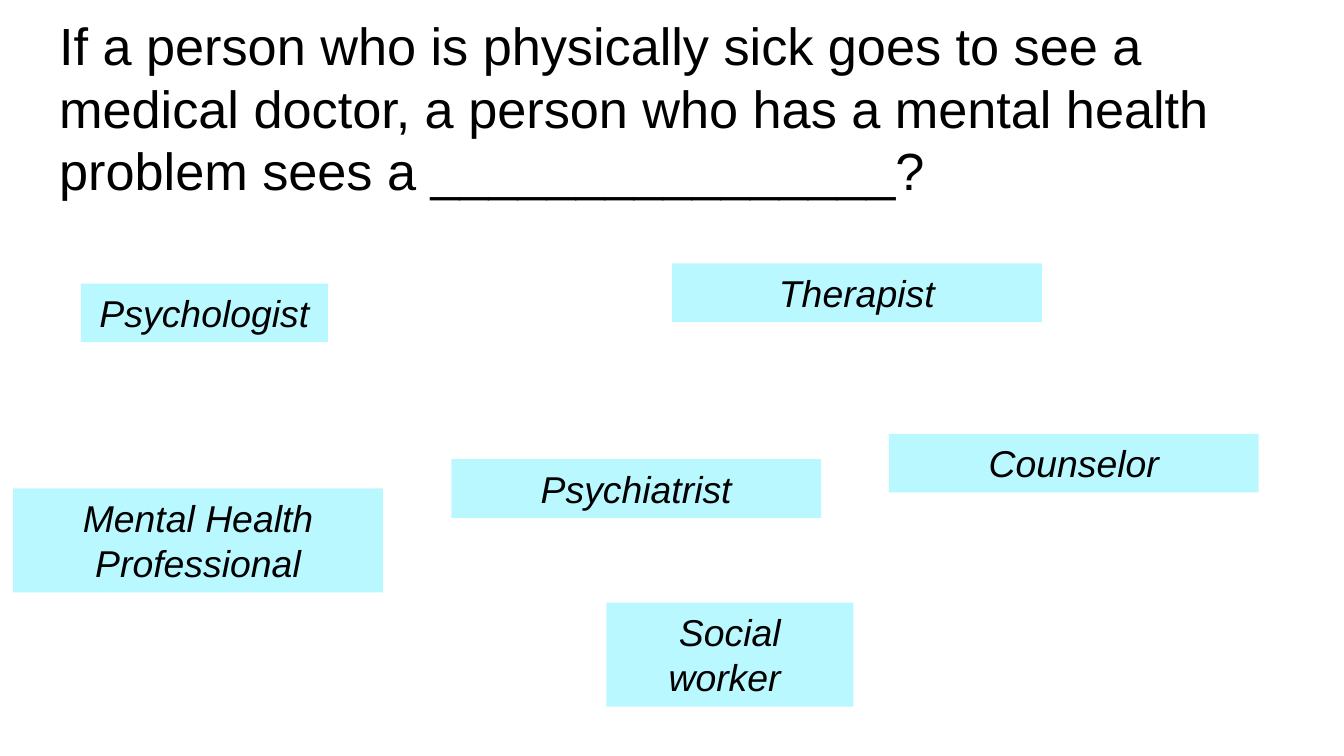
from pptx import Presentation
from pptx import util as u
from pptx.dml.color import RGBColor
from pptx.enum import shapes, text

BLACK = RGBColor(0x00, 0x00, 0x00)
PALE_CYAN = RGBColor(0xBA, 0xF8, 0xFF)
FONT = "Arial"

# Content
QUESTION = (
    "If a person who is physically sick goes to see a medical doctor, "
    "a person who has a mental health problem sees a ________________?"
)
NARROW, WIDE = 4.67, 6.99  # answer widths in cm
ONE_LINE, TWO_LINES = 1.11, 1.97  # answer heights in cm
ANSWERS = [  # wording, left, top, width, height
    ("Psychologist", 1.53, 5.36, NARROW, ONE_LINE),
    ("Social worker ", 11.46, 11.39, NARROW, TWO_LINES),
    ("Mental Health Professional", 0.25, 9.23, WIDE, TWO_LINES),
    ("Psychiatrist", 8.53, 8.68, WIDE, ONE_LINE),
    ("Therapist", 12.7, 4.98, WIDE, ONE_LINE),
    ("Counselor", 16.8, 8.2, WIDE, ONE_LINE),
]


def write(shape, wording, size, alignment, italic=False):
    frame = shape.text_frame
    frame.word_wrap = True
    frame.vertical_anchor = text.MSO_ANCHOR.TOP
    paragraph = frame.paragraphs[0]
    paragraph.text = wording
    paragraph.alignment = alignment
    font = paragraph.font
    font.name, font.size, font.italic = FONT, u.Pt(size), italic
    font.color.rgb = BLACK
    return frame


presentation = Presentation()
presentation.slide_width = u.Cm(25.4)
presentation.slide_height = u.Cm(14.29)
slide = presentation.slides.add_slide(presentation.slide_layouts[6])

# Question
question = slide.shapes.add_textbox(u.Cm(0.87), 0, u.Cm(23.67), u.Cm(1.6))
frame = write(question, QUESTION, 28, text.PP_ALIGN.LEFT)
frame.margin_top = frame.margin_bottom = u.Cm(0.25)

# Possible answers
for wording, *box in ANSWERS:
    answer = slide.shapes.add_shape(
        shapes.MSO_SHAPE.RECTANGLE, *(u.Cm(length) for length in box)
    )
    answer.shadow.inherit = False
    answer.fill.solid()
    answer.fill.fore_color.rgb = PALE_CYAN
    answer.line.fill.background()
    frame = write(answer, wording, 20, text.PP_ALIGN.CENTER, italic=True)
    frame.auto_size = text.MSO_AUTO_SIZE.SHAPE_TO_FIT_TEXT

presentation.save("out.pptx")
